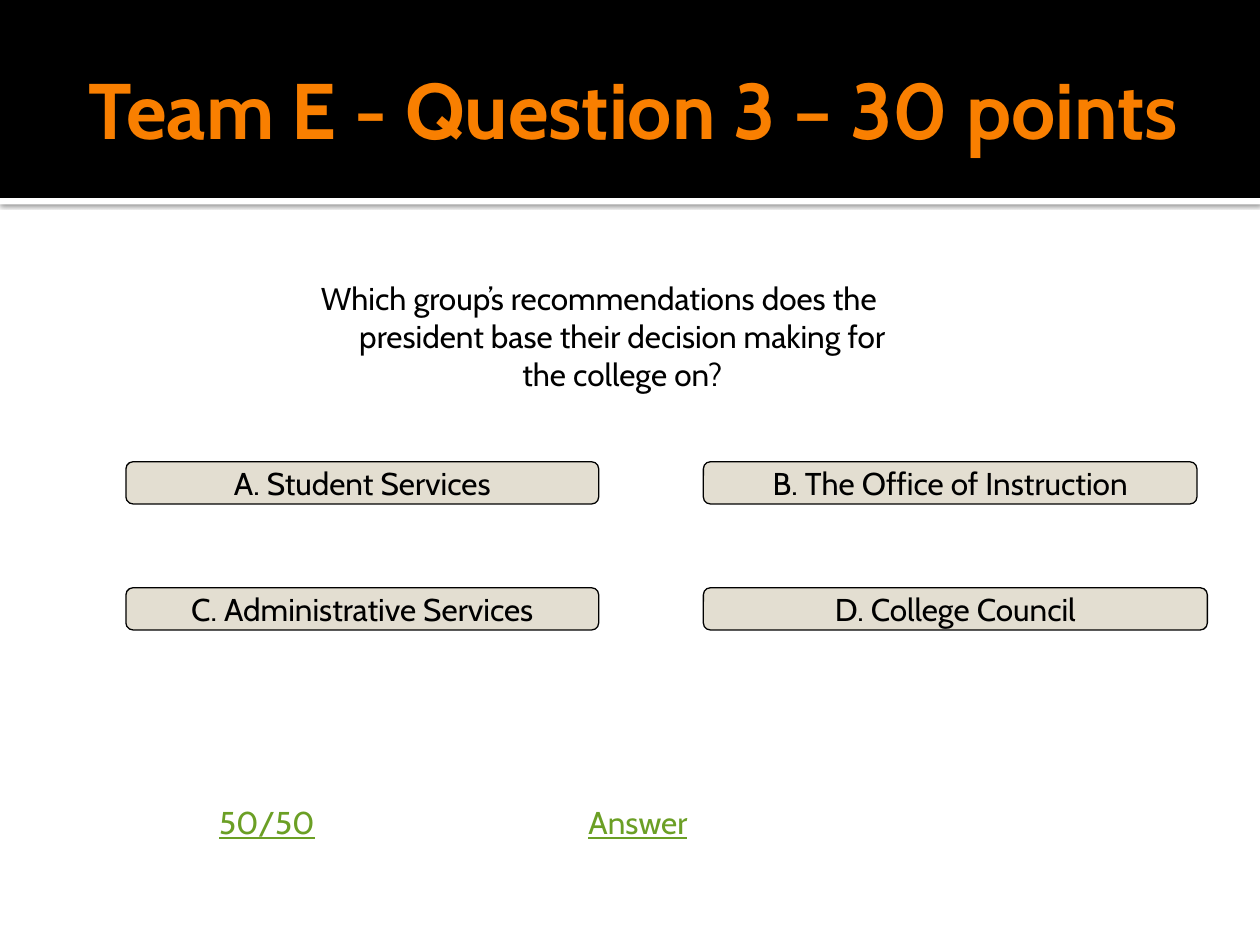
from lxml import etree
from pptx import Presentation
from pptx.dml.color import RGBColor
from pptx.enum.shapes import MSO_SHAPE as Shape
from pptx.enum.text import MSO_ANCHOR as Anchor, PP_ALIGN as Align
from pptx.oxml import parse_xml
from pptx.oxml.ns import nsdecls
from pptx.util import Cm, Pt

BLACK, WHITE, ORANGE, GREEN, SAND = "000000", "FFFFFF", "F97F00", "6B9F25", "E3DED1"


def color(value):
    """Turn a hex string into a colour."""
    return RGBColor.from_string(value)


def write(frame, text, size=18, ink=BLACK, bold=False, underline=False, indent=0, hanging=0):
    """Put one centred paragraph into a text frame."""
    para = frame.paragraphs[0]
    para.text = text
    para.alignment = Align.CENTER
    properties = para._p.get_or_add_pPr()
    properties.set("marL", str(Cm(indent)))
    properties.set("indent", str(-Cm(hanging)))
    font = para.font
    font.name, font.size, font.bold, font.underline = "Cabin", Pt(size), bold, underline
    font.color.rgb = color(ink)


def add_block(page, kind, left, top, width, height, fill):
    """Add a filled shape without line or shadow."""
    block = page.shapes.add_shape(kind, Cm(left), Cm(top), Cm(width), Cm(height))
    block.shadow.inherit = False
    block.fill.solid()
    block.fill.fore_color.rgb = color(fill)
    block.line.fill.background()
    return block


def add_header(page):
    """Add the black header and the white strip that casts a shadow below it."""
    strip = add_block(page, Shape.RECTANGLE, 0, 3.99, 25.4, 0.13, WHITE)
    effects = strip._element.spPr.find("{*}effectLst")
    effects.append(parse_xml(
        f'<a:outerShdw {nsdecls("a")} blurRad="{Pt(2.5)}" dist="{Pt(0.8)}" dir="5400000" '
        f'algn="t" rotWithShape="0"><a:srgbClr val="{BLACK}"><a:alpha val="60000"/>'
        '</a:srgbClr></a:outerShdw>'))
    add_block(page, Shape.RECTANGLE, 0, 0, 25.4, 3.99, BLACK)


def add_text(page, left, top, width, height, text, anchor=Anchor.TOP, **style):
    """Add a wrapping text box."""
    box = page.shapes.add_textbox(Cm(left), Cm(top), Cm(width), Cm(height))
    frame = box.text_frame
    frame.word_wrap = True
    frame.vertical_anchor = anchor
    write(frame, text, **style)
    return box


def add_choice(page, left, top, width, text):
    """Add a rounded answer button."""
    button = add_block(page, Shape.ROUNDED_RECTANGLE, left, top, width, 0.85, SAND)
    button.line.color.rgb = color(BLACK)
    button.line.width = Pt(0.75)
    frame = button.text_frame
    frame.word_wrap = False
    frame.vertical_anchor = Anchor.MIDDLE
    write(frame, text)


def add_controls(page, labels):
    """Add the plain one-row table of controls."""
    table = page.shapes.add_table(1, len(labels), Cm(1.48), Cm(16.09), Cm(22.44), Cm(1.48)).table
    table.first_row = table.horz_banding = False
    for cell, label in zip(table.rows[0].cells, labels):
        cell.fill.background()
        if label:
            write(cell.text_frame, label, ink=GREEN, underline=True, indent=0.32)


def main():
    """Build the quiz slide."""
    deck = Presentation()
    deck.slide_width, deck.slide_height = Cm(25.4), Cm(19.05)
    page = deck.slides.add_slide(deck.slide_layouts[6])
    add_header(page)
    title = add_text(page, 1.27, 0.43, 22.86, 3.48, "Team E - Question 3 – 30 points",
                     Anchor.MIDDLE, size=45, ink=ORANGE, bold=True)
    title.text_frame.margin_right = Cm(0.13)
    add_text(page, 5.72, 5.5, 12.7, 2.54,
             "Which group’s recommendations does the president base their decision making "
             "for the college on?", indent=0.95, hanging=0.95)
    choices = [
        (2.54, 9.31, 9.53, "A. Student Services"),
        (14.18, 9.31, 9.95, "B. The Office of Instruction"),
        (2.54, 11.85, 9.53, "C. Administrative Services"),
        (14.18, 11.85, 10.16, "D. College Council"),
    ]
    for choice in choices:
        add_choice(page, *choice)
    add_controls(page, ["50/50", "Answer", ""])
    deck.save("out.pptx")


if __name__ == "__main__":
    main()
